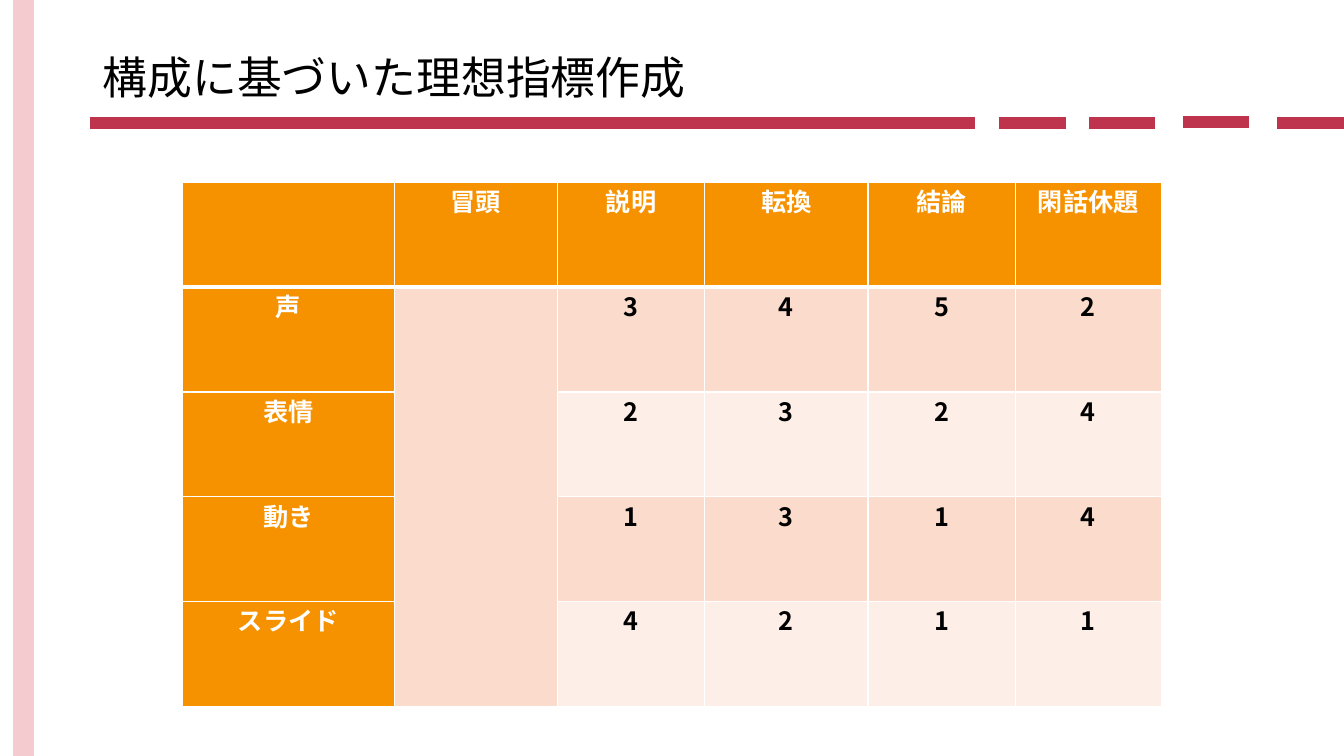
from lxml import etree
from pptx import Presentation
from pptx.dml.color import RGBColor
from pptx.enum.shapes import MSO_CONNECTOR
from pptx.enum.text import MSO_ANCHOR, PP_ALIGN
from pptx.oxml.ns import qn
from pptx.util import Inches, Pt

STRAIGHT = MSO_CONNECTOR.STRAIGHT
MIDDLE = MSO_ANCHOR.MIDDLE
CENTER = PP_ALIGN.CENTER

WHITE, BLACK = "FFFFFF", "000000"
PINK, CRIMSON, ORANGE = "F4CCD0", "BF344D", "F69200"
BANDS = ("FBDCCC", "FDEEE7")

RULE_SEGMENTS = [
    (0.89, 9.67, 1.22),
    (9.91, 10.57, 1.22),
    (10.8, 11.46, 1.22),
    (11.73, 12.39, 1.21),
    (12.67, 13.33, 1.22),
]
COLUMN_WIDTHS = [2.1, 1.62, 1.46, 1.62, 1.46, 1.45]
ROW_HEIGHT = 1.04
SCORES = [
    ["", "冒頭", "説明", "転換", "結論", "閑話休題"],
    ["声", "", "3", "4", "5", "2"],
    ["表情", "", "2", "3", "2", "4"],
    ["動き", "", "1", "3", "1", "4"],
    ["スライド", "", "4", "2", "1", "1"],
]


def color(value):
    return RGBColor.from_string(value)


class SlideBuilder:
    font_name = "Noto Sans CJK JP"

    def __init__(self, slide):
        self.slide = slide

    def line(self, start, end, line_color, width):
        connector = self.slide.shapes.add_connector(
            STRAIGHT, *(Inches(value) for value in (*start, *end)))
        connector.line.color.rgb = color(line_color)
        connector.line.width = Pt(width)
        etree.SubElement(connector._element.spPr, qn("a:effectLst"))

    def add_text(self, paragraph, text, size, text_color, bold=False):
        run = paragraph.add_run()
        run.text = text
        formats = {"name": self.font_name, "size": Pt(size), "bold": bold}
        for name, value in formats.items():
            setattr(run.font, name, value)
        run.font.color.rgb = color(text_color)
        east_asian = etree.SubElement(run._r.get_or_add_rPr(), qn("a:ea"))
        east_asian.set("typeface", self.font_name)

    def title(self, text, left, top, width, height):
        box = self.slide.shapes.add_textbox(
            *(Inches(value) for value in (left, top, width, height)))
        frame = box.text_frame
        frame.word_wrap = True
        frame.vertical_anchor = MIDDLE
        paragraph = frame.paragraphs[0]
        paragraph.line_spacing = 0.9
        self.add_text(paragraph, text, 32, BLACK)

    def borders(self, cell, widths):
        properties = cell._tc.get_or_add_tcPr()
        for side, width in widths.items():
            border = etree.SubElement(
                properties, qn(f"a:ln{side}"), w=str(Pt(width)))
            fill = etree.SubElement(border, qn("a:solidFill"))
            etree.SubElement(fill, qn("a:srgbClr"), val=WHITE)

    def cell(self, cell, text, row, column):
        heading = row == 0 or column == 0
        margins = {"margin_left": 0.07, "margin_right": 0.07,
                   "margin_top": 0, "margin_bottom": 0}
        for name, value in margins.items():
            setattr(cell, name, Inches(value))
        self.borders(cell, {"L": 1, "R": 1, "T": 3 if row == 1 else 1,
                            "B": 3 if row == 0 else 1})
        cell.fill.solid()
        cell.fill.fore_color.rgb = color(
            ORANGE if heading else BANDS[(row - 1) % 2])
        if text:
            paragraph = cell.text_frame.paragraphs[0]
            paragraph.alignment = CENTER
            self.add_text(paragraph, text, 18, WHITE if heading else BLACK, True)

    def table(self, rows, left, top, widths, row_height):
        table = self.slide.shapes.add_table(
            len(rows), len(widths), Inches(left), Inches(top),
            Inches(sum(widths)), Inches(row_height * len(rows))).table
        for column, width in zip(table.columns, widths):
            column.width = Inches(width)
        for row_index, texts in enumerate(rows):
            table.rows[row_index].height = Inches(row_height)
            for column_index, text in enumerate(texts):
                self.cell(table.cell(row_index, column_index), text,
                          row_index, column_index)
        return table


def main():
    presentation = Presentation()
    presentation.slide_width = Inches(13.33)
    presentation.slide_height = Inches(7.5)
    slide = presentation.slides.add_slide(presentation.slide_layouts[6])
    builder = SlideBuilder(slide)

    builder.line((0.23, 0), (0.23, 7.59), PINK, 15)
    for left, right, height in RULE_SEGMENTS:
        builder.line((right, height), (left, height), CRIMSON, 8)
    builder.title("構成に基づいた理想指標作成", 0.92, 0.07, 11.5, 1.45)
    table = builder.table(SCORES, 1.81, 1.81, COLUMN_WIDTHS, ROW_HEIGHT)
    table.cell(1, 1).merge(table.cell(4, 1))

    presentation.save("out.pptx")


if __name__ == "__main__":
    main()
